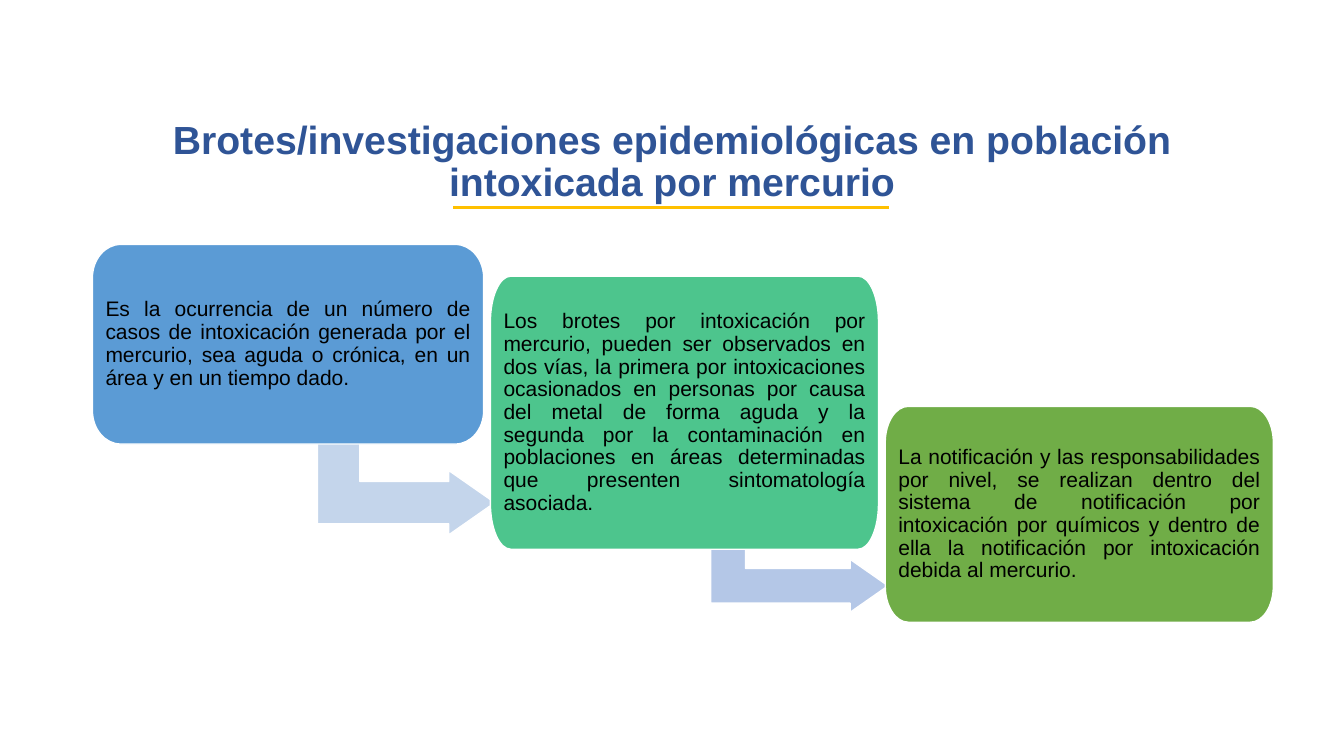
from dataclasses import dataclass

from lxml import etree
from pptx import Presentation
from pptx.dml.color import RGBColor
from pptx.enum.shapes import MSO_CONNECTOR, MSO_SHAPE
from pptx.enum.text import MSO_ANCHOR, MSO_AUTO_SIZE, PP_ALIGN
from pptx.oxml.ns import qn
from pptx.util import Cm, Pt

BENT_ARROW = MSO_SHAPE.BENT_UP_ARROW
STRAIGHT = MSO_CONNECTOR.STRAIGHT
MIDDLE = MSO_ANCHOR.MIDDLE
NO_AUTOFIT = MSO_AUTO_SIZE.NONE
CENTER, JUSTIFY = PP_ALIGN.CENTER, PP_ALIGN.JUSTIFY

COLORS = {
    "title": "2F5496", "underline": "FFC000", "outline": "FFFFFF", "text": "000000",
    "blue": "5B9BD5", "mint": "4DC58D", "green": "70AD47",
    "first arrow": "C4D5EB", "second arrow": "B4C7E7",
}
FONT = "Arial"
INSET = Cm(0.33)
ARROW_ADJUSTMENTS = (0.328, 0.25, 0.358)
CURVE_PULL = 0.55

Point = tuple[int, int]


@dataclass
class Step:
    left: float
    top: float
    width: float
    height: float
    corner_width: float
    color: str
    text: str


@dataclass
class Arrow:
    left: float
    top: float
    width: float
    height: float
    color: str


STEPS = [
    Step(2.33, 6.16, 9.86, 5.03, 0.71, "blue",
         "Es la ocurrencia de un número de casos de intoxicación generada por el "
         "mercurio, sea aguda o crónica, en un área y en un tiempo dado."),
    Step(12.36, 6.96, 9.78, 6.88, 0.51, "mint",
         "Los brotes por intoxicación por mercurio, pueden ser observados en dos vías, "
         "la primera por intoxicaciones ocasionados en personas por causa del metal de "
         "forma aguda y la segunda por la contaminación en poblaciones en áreas "
         "determinadas que presenten sintomatología asociada."),
    Step(22.31, 10.24, 9.78, 5.44, 0.58, "green",
         "La notificación y las responsabilidades por nivel, se realizan dentro del "
         "sistema de notificación por intoxicación por químicos y dentro de ella la "
         "notificación por intoxicación debida al mercurio."),
]
ARROWS = [
    Arrow(8.61, 9.62, 3.25, 4.47, "first arrow"),
    Arrow(18.81, 11.86, 2.67, 4.47, "second arrow"),
]


def rgb(name: str) -> RGBColor:
    return RGBColor.from_string(COLORS[name])


def set_attributes(target, values: dict) -> None:
    for name, value in values.items():
        setattr(target, name, value)


def write_text(shape, text: str, color: str, frame_format: dict,
               paragraph_format: dict, font_format: dict) -> None:
    frame = shape.text_frame
    frame.text = text
    set_attributes(frame, {"word_wrap": True, "auto_size": NO_AUTOFIT,
                           "vertical_anchor": MIDDLE, **frame_format})
    paragraph = frame.paragraphs[0]
    set_attributes(paragraph, {"line_spacing": 0.9, **paragraph_format})
    font = paragraph.runs[0].font
    set_attributes(font, {"name": FONT, **font_format})
    font.color.rgb = rgb(color)


def paint(shape, color: str) -> None:
    shape.shadow.inherit = False
    shape.fill.solid()
    shape.fill.fore_color.rgb = rgb(color)
    shape.line.color.rgb = rgb("outline")
    shape.line.width = Pt(1)


def pull(point: Point, corner: Point) -> Point:
    """Move a point towards a corner to get the control point of a curve."""
    x, y = (round(a + CURVE_PULL * (b - a)) for a, b in zip(point, corner))
    return x, y


def bend_corner(segment, start: Point, corner: Point, end: Point) -> None:
    """Replace a straight outline segment with a curve."""
    curve = etree.Element(qn("a:cubicBezTo"))
    for x, y in (pull(start, corner), pull(end, corner), end):
        etree.SubElement(curve, qn("a:pt"), x=str(x), y=str(y))
    segment.getparent().replace(segment, curve)


def add_rounded_box(slide, step: Step):
    """Draw a box whose four corners are quarter ellipses."""
    width, height = Cm(step.width), Cm(step.height)
    corner_x, corner_y = Cm(step.corner_width), Cm(step.height / 6)
    right, bottom = width - corner_x, height - corner_y
    corners = [(0, 0), (width, 0), (width, height), (0, height)]
    points = [(0, corner_y), (corner_x, 0), (right, 0), (width, corner_y),
              (width, bottom), (right, height), (corner_x, height), (0, bottom)]

    builder = slide.shapes.build_freeform(*points[0])
    builder.add_line_segments(points[1:] + points[:1], close=True)
    shape = builder.convert_to_shape(Cm(step.left), Cm(step.top))
    segments = list(shape._element.iter(qn("a:lnTo")))
    for segment, start, corner, end in zip(segments[::2], points[::2], corners, points[1::2]):
        bend_corner(segment, start, corner, end)
    return shape


def add_step(slide, step: Step) -> None:
    shape = add_rounded_box(slide, step)
    paint(shape, step.color)
    margins = {f"margin_{side}": INSET for side in ("left", "top", "right", "bottom")}
    write_text(shape, step.text, "text", margins,
               {"alignment": JUSTIFY, "space_after": Pt(5.25)}, {"size": Pt(15)})


def add_arrow(slide, arrow: Arrow) -> None:
    shape = slide.shapes.add_shape(BENT_ARROW, Cm(arrow.left), Cm(arrow.top),
                                   Cm(arrow.width), Cm(arrow.height))
    shape.rotation = 90
    for index, value in enumerate(ARROW_ADJUSTMENTS):
        shape.adjustments[index] = value
    paint(shape, arrow.color)


def add_title(slide) -> None:
    title = slide.shapes.title
    set_attributes(title, {"left": Cm(2.33), "top": Cm(2.18),
                           "width": Cm(29.21), "height": Cm(3.84)})
    write_text(title,
               "Brotes/investigaciones epidemiológicas en población intoxicada por mercurio",
               "title", {}, {"alignment": CENTER}, {"size": Pt(28), "bold": True})


def add_underline(slide) -> None:
    line = slide.shapes.add_connector(STRAIGHT, Cm(11.42), Cm(5.23), Cm(22.4), Cm(5.23))
    line.line.color.rgb = rgb("underline")
    line.line.width = Pt(2.25)
    etree.SubElement(line._element.spPr, qn("a:effectLst"))


def main() -> None:
    presentation = Presentation()
    presentation.slide_width = Cm(33.87)
    presentation.slide_height = Cm(19.05)
    slide = presentation.slides.add_slide(presentation.slide_layouts.get_by_name("Title Only"))
    add_title(slide)
    for arrow, step in zip(ARROWS, STEPS):
        add_arrow(slide, arrow)
        add_step(slide, step)
    add_step(slide, STEPS[-1])
    add_underline(slide)
    presentation.save("out.pptx")


if __name__ == "__main__":
    main()
